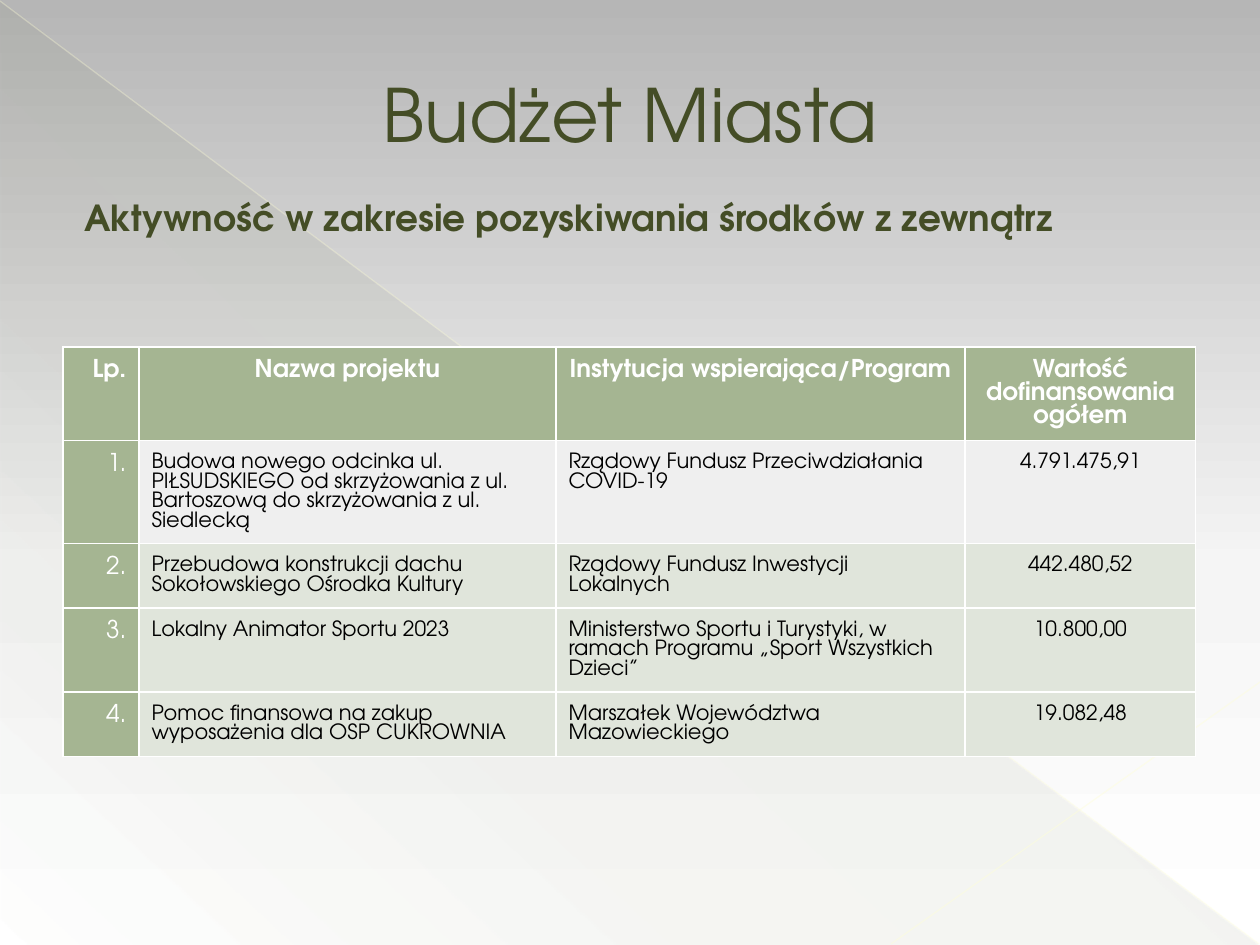
from lxml.etree import SubElement
from pptx import Presentation
from pptx.dml.color import RGBColor
from pptx.enum.shapes import MSO_CONNECTOR, MSO_SHAPE
from pptx.enum.text import MSO_ANCHOR, PP_ALIGN
from pptx.oxml.ns import qn
from pptx.util import Emu, Pt

FONT = "TeX Gyre Adventor"
OLIVE = RGBColor(0x44, 0x4D, 0x26)
SAGE = RGBColor(0xA5, 0xB5, 0x92)
PALE_SAGE = RGBColor(0xE0, 0xE5, 0xDB)
PALE_GREY = RGBColor(0xEF, 0xEF, 0xEF)
MIDDLE_GREY = RGBColor(0xB6, 0xB6, 0xB6)
LIGHT_GREY = RGBColor(0xF5, 0xF5, 0xF5)
CREAM = RGBColor(0xFF, 0xFF, 0xD7)
WHITE = RGBColor(0xFF, 0xFF, 0xFF)
BLACK = RGBColor(0, 0, 0)
PX = 914400 / 126


def write_text(frame, text, size, color, bold=False, align=PP_ALIGN.LEFT, spacing=None):
    frame.word_wrap = True
    para = frame.paragraphs[0]
    para.alignment = align
    if spacing:
        para.line_spacing = Pt(spacing)
    span = para.add_run()
    span.text = text
    span.font.name = FONT
    span.font.size = Pt(size)
    span.font.bold = bold
    span.font.color.rgb = color
    return para


def paint_gradient(properties, stops, angle):
    """Replace a solid fill by stops of (position, colour, opacity), in percent."""
    solid = properties.find(qn("a:solidFill"))
    gradient = properties.makeelement(qn("a:gradFill"), {"rotWithShape": "1"})
    stop_list = SubElement(gradient, qn("a:gsLst"))
    for position, color, opacity in stops:
        stop = SubElement(stop_list, qn("a:gs"), pos=str(position * 1000))
        tint = SubElement(stop, qn("a:srgbClr"), val=str(color))
        SubElement(tint, qn("a:alpha"), val=str(opacity * 1000))
    SubElement(gradient, qn("a:lin"), ang=str(angle * 60000), scaled="0")
    properties.replace(solid, gradient)


deck = Presentation()
deck.slide_width = Emu(int(1260 * PX))
deck.slide_height = Emu(int(945 * PX))
page = deck.slides.add_slide(deck.slide_layouts[5])

# Background
page.background.fill.solid()
paint_gradient(page.element.find(".//" + qn("p:bgPr")),
               [(0, MIDDLE_GREY, 100), (60, LIGHT_GREY, 100), (100, WHITE, 100)], 90)

# Shaded triangle and thin diagonal lines
triangle = page.shapes.add_shape(
    MSO_SHAPE.RIGHT_TRIANGLE, *[Emu(int(n * PX)) for n in (1, 2, 1258, 943)])
triangle.shadow.inherit = False
triangle.line.fill.background()
triangle.fill.solid()
paint_gradient(triangle.element.spPr, [(0, OLIVE, 7), (70, OLIVE, 5), (100, OLIVE, 0)], 133)

for ends, opacity in [((0, 1, 1259, 944), 33), ((1260, 682, 891, 944), 42)]:
    diagonal = page.shapes.add_connector(
        MSO_CONNECTOR.STRAIGHT, *[Emu(int(n * PX)) for n in ends])
    diagonal.line.width = Pt(0.75)
    diagonal.line.color.rgb = CREAM
    tint = diagonal.element.spPr.find(".//" + qn("a:srgbClr"))
    SubElement(tint, qn("a:alpha"), val=str(opacity * 1000))
    SubElement(diagonal.element.spPr, qn("a:effectLst"))

# Title, brought in front of the decoration
title = page.shapes.title
title.left, title.top, title.width, title.height = [
    Emu(int(n * PX)) for n in (63, 37, 1134, 152)]
title.text_frame.vertical_anchor = MSO_ANCHOR.MIDDLE
write_text(title.text_frame, "Budżet Miasta", 42, OLIVE, align=PP_ALIGN.CENTER)
page.shapes.element.append(title.element)

# Table
ROWS = [
    ("Lp.", "Nazwa projektu", "Instytucja wspierająca/Program",
     "Wartość dofinansowania ogółem"),
    ("1.", "Budowa nowego odcinka ul. PIŁSUDSKIEGO od skrzyżowania z ul. "
     "Bartoszową do skrzyżowania z ul. Siedlecką",
     "Rządowy Fundusz Przeciwdziałania COVID-19", "4.791.475,91"),
    ("2.", "Przebudowa konstrukcji dachu Sokołowskiego Ośrodka Kultury",
     "Rządowy Fundusz Inwestycji Lokalnych", "442.480,52"),
    ("3.", "Lokalny Animator Sportu 2023",
     "Ministerstwo Sportu i Turystyki, w ramach Programu „Sport Wszystkich Dzieci”",
     "10.800,00"),
    ("4.", "Pomoc finansowa na zakup wyposażenia dla OSP CUKROWNIA",
     "Marszałek Województwa Mazowieckiego", "19.082,48"),
]
COLUMN_WIDTHS = [76, 417, 409, 231]
ROW_HEIGHTS = [93, 103, 64, 84, 64]
COLUMN_ALIGN = [PP_ALIGN.RIGHT, PP_ALIGN.LEFT, PP_ALIGN.LEFT, PP_ALIGN.CENTER]
place = (63, 347, sum(COLUMN_WIDTHS), sum(ROW_HEIGHTS))
table = page.shapes.add_table(
    len(ROWS), len(COLUMN_WIDTHS), *[Emu(int(n * PX)) for n in place]).table
for column, width in zip(table.columns, COLUMN_WIDTHS):
    column.width = Emu(int(width * PX))

for r, values in enumerate(ROWS):
    table.rows[r].height = Emu(int(ROW_HEIGHTS[r] * PX))
    for c, value in enumerate(values):
        cell = table.cell(r, c)
        header = r == 0
        strong = header or c == 0
        cell.margin_left = cell.margin_right = Pt(7.2)
        cell.margin_top = cell.margin_bottom = Pt(7.2)
        cell.fill.solid()
        cell.fill.fore_color.rgb = SAGE if strong else PALE_GREY if r == 1 else PALE_SAGE
        write_text(cell.text_frame, value, 14 if strong else 12,
                   WHITE if strong else BLACK, bold=header,
                   align=PP_ALIGN.CENTER if header and c else COLUMN_ALIGN[c],
                   spacing=13 if strong else 11.15)
        # White cell borders go before the fill
        properties = cell._tc.get_or_add_tcPr()
        for i, side in enumerate(("a:lnL", "a:lnR", "a:lnT", "a:lnB")):
            border = properties.makeelement(qn(side), {"w": str(Pt(0.75))})
            paint = SubElement(border, qn("a:solidFill"))
            SubElement(paint, qn("a:srgbClr"), val=str(WHITE))
            properties.insert(i, border)

# Subtitle
box = page.shapes.add_textbox(*[Emu(int(n * PX)) for n in (63, 189, 1134, 76)])
para = write_text(box.text_frame, "Aktywność w zakresie pozyskiwania środków z zewnątrz",
                  20.5, OLIVE, bold=True)
para._p.get_or_add_pPr().set("marL", str(int(9 * PX)))

deck.save("out.pptx")
